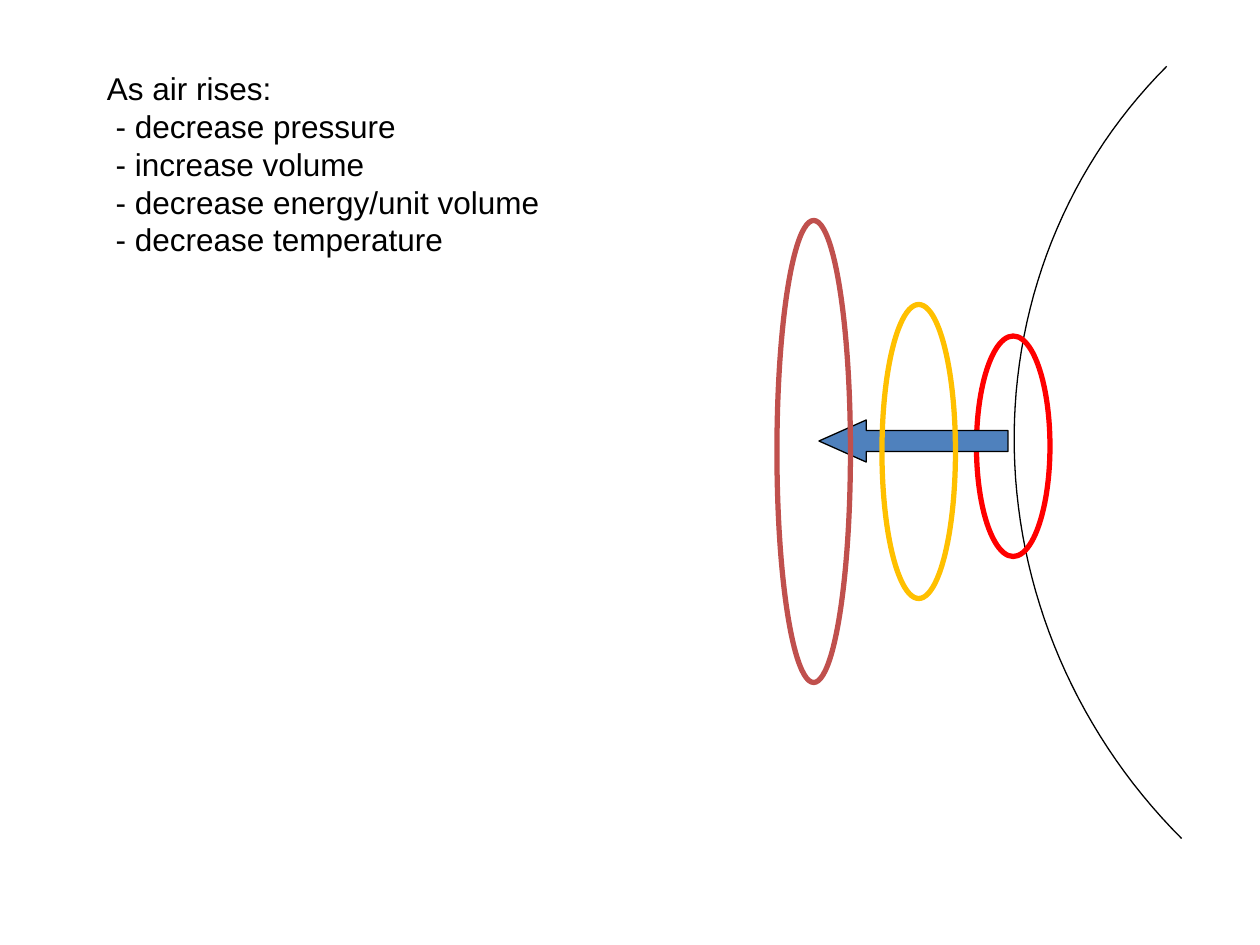
from math import cos, radians, sin

from pptx import Presentation
from pptx.dml.color import RGBColor
from pptx.enum.shapes import MSO_SHAPE
from pptx.enum.text import MSO_AUTO_SIZE
from pptx.util import Pt

PX = 7620  # EMU per px, 120 px to the inch
OVAL = MSO_SHAPE.OVAL
ARROW = MSO_SHAPE.LEFT_ARROW
FIT = MSO_AUTO_SIZE.SHAPE_TO_FIT_TEXT

BLACK = RGBColor(0x00, 0x00, 0x00)
RED = RGBColor(0xFF, 0x00, 0x00)
GOLD = RGBColor(0xFF, 0xC0, 0x00)
BRICK = RGBColor(0xC0, 0x50, 0x4D)
BLUE = RGBColor(0x4F, 0x81, 0xBD)

FONT = {"name": "Arial", "size": Pt(18)}
LINES = [
    "As air rises:",
    " - decrease pressure",
    " - increase volume",
    " - decrease energy/unit volume",
    " - decrease temperature",
]


def scale(*box):
    return [n * PX for n in box]


def style(shape, color, width, fill=None):
    shape.shadow.inherit = False
    shape.line.color.rgb = color
    shape.line.width = Pt(width)
    if fill is None:
        shape.fill.background()
    else:
        shape.fill.solid()
        shape.fill.fore_color.rgb = fill


def add_curve(slide, mid_x, mid_y, rad_x, rad_y, tilt):
    """Draw the left quarter of a tilted ellipse as an open line."""
    turn = radians(tilt)
    points = []
    for step in range(61):
        angle = radians(180 + 1.5 * step)
        x, y = rad_x * cos(angle), rad_y * sin(angle)
        points.append((round((mid_x + x * cos(turn) - y * sin(turn)) * PX),
                       round((mid_y + x * sin(turn) + y * cos(turn)) * PX)))
    build = slide.shapes.build_freeform(*points[0])
    build.add_line_segments(points[1:], close=False)
    style(build.convert_to_shape(), BLACK, 0.75)


def add_ring(slide, left, top, width, height, color):
    style(slide.shapes.add_shape(OVAL, *scale(left, top, width, height)), color, 3)


def add_arrow(slide, left, top, width, height):
    arrow = slide.shapes.add_shape(ARROW, *scale(left, top, width, height))
    arrow.adjustments[0] = 0.5
    arrow.adjustments[1] = 1.125
    style(arrow, BLACK, 0.75, BLUE)


def add_air(slide, left, top):
    """Place the rising air: rings that grow as they leave the ground."""
    add_ring(slide, left + 190, top + 110, 70, 210, RED)
    add_arrow(slide, left + 40, top + 190, 180, 40)
    add_ring(slide, left + 100, top + 80, 70, 280, GOLD)
    add_ring(slide, left, top, 70, 440, BRICK)


def add_notes(slide, left, top, width, height):
    frame = slide.shapes.add_textbox(*scale(left, top, width, height)).text_frame
    frame.word_wrap = True
    frame.auto_size = FIT
    frame.text = "\n".join(LINES)
    for para in frame.paragraphs:
        for key, value in FONT.items():
            setattr(para.font, key, value)
        para.font.color.rgb = BLACK


def main():
    deck = Presentation()
    deck.slide_width, deck.slide_height = scale(1200, 900)
    slide = deck.slides.add_slide(deck.slide_layouts[6])
    add_curve(slide, 1486, 438, 510, 530, -45)
    add_air(slide, 740, 210)
    add_notes(slide, 90, 60, 580, 194)
    deck.save("out.pptx")


if __name__ == "__main__":
    main()
